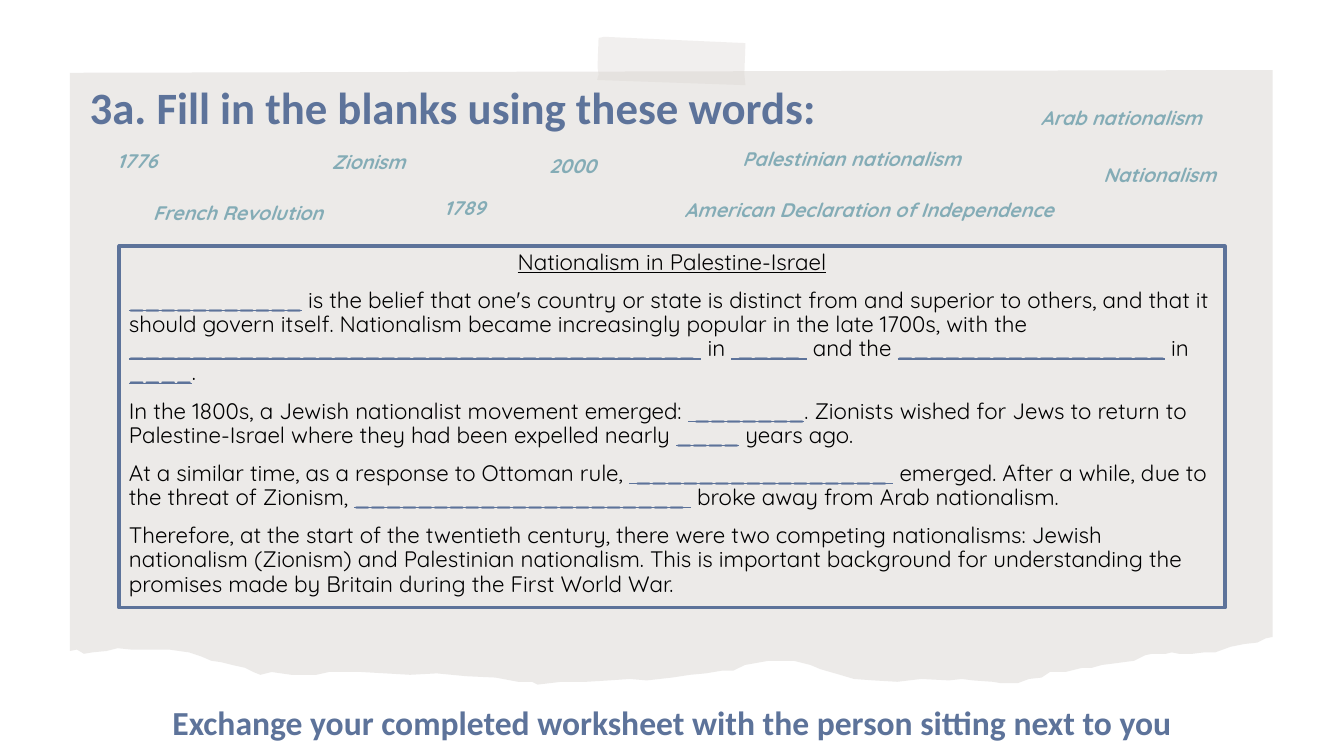
from lxml import etree
from pptx import Presentation
from pptx.dml import color
from pptx.enum import shapes, text
from pptx.oxml import ns
from pptx.util import Pt

BLUE, TEAL, BLACK = "5D739A", "84ACB6", "000000"


def paint(fill, hex_color, opacity=100):
    """Give a fill a solid colour, with opacity in percent."""
    fill.solid()
    fill.fore_color.rgb = color.RGBColor.from_string(hex_color)
    if opacity < 100:
        solid = fill._xPr.find(ns.qn("a:solidFill"))
        etree.SubElement(solid[0], ns.qn("a:alpha"), val=str(opacity * 1000))


def write(paragraph, content, hex_color, **font_values):
    """Add a run with the given font values to a paragraph."""
    paragraph.line_spacing = 0.9
    run = paragraph.add_run()
    run.text = content
    paint(run.font.fill, hex_color)
    for name, value in font_values.items():
        setattr(run.font, name, value)


presentation = Presentation()
presentation.slide_width, presentation.slide_height = Pt(960), Pt(540)
slide = presentation.slides.add_slide(presentation.slide_layouts[6])

# Torn sheet and sticky tape: outline points, colour, opacity, rotation
sheet_outline = [
    (909.4, 50.4), (909.4, 455), (904, 455.8), (898.5, 459.4), (889, 460),
    (879, 462.2), (868.3, 465.8), (859.7, 465.8), (851.8, 467.3), (842.4, 466.6),
    (836.6, 465.8), (833, 467.3), (823, 467.3), (818, 468), (810, 471.6),
    (795, 474.5), (787, 475.2), (780.5, 476.6), (772.6, 477.4), (761, 479.5),
    (755.3, 479.5), (750, 480.2), (743.8, 483.8), (735, 485.3), (727, 488.2),
    (715, 488.2), (709, 486.7), (695, 486), (687, 484.6), (677.5, 486),
    (658, 484.6), (641, 486.7), (624, 486), (610, 485.3), (600.5, 481.7),
    (593, 479.5), (586, 478), (579, 475.2), (566.6, 471.6), (558, 472.3),
    (549.4, 472.3), (532, 475.2), (524, 478.8), (516, 478.8), (504, 481),
    (493, 482.4), (480, 483.8), (462, 486), (450, 484.6), (435, 486),
    (419, 486.7), (401, 487.4), (384, 488.9), (380, 487.4), (370, 486.7),
    (353.5, 483.8), (333.4, 483), (312.5, 481), (293, 481.7), (258, 479.5),
    (234.7, 479.5), (226, 481.7), (208, 481.7), (194.4, 480.2), (186, 481.7),
    (181.4, 480.2), (175, 477.4), (165.6, 475.2), (158.4, 473), (151, 471.6),
    (144, 468.7), (135.4, 465.8), (128, 465), (121, 464.4), (111, 463.7),
    (103.7, 463.7), (94.3, 464.4), (84.2, 463), (76.3, 465), (65.5, 465.8),
    (59.8, 466.6), (54.7, 464.4), (50.4, 465), (50.4, 51.8),
]
tape_outline = [
    (427.2, 29), (430.6, 27.6), (531.7, 29.2), (532.5, 33.5), (532.2, 50.8),
    (532.7, 59.4), (427.4, 59.4), (427.8, 55), (426.9, 50), (427, 40),
]
for outline, fill_color, opacity, rotation in [
    (sheet_outline, "82766A", 15, 0),
    (tape_outline, "D9D4D0", 35, 2),
]:
    builder = slide.shapes.build_freeform(*outline[0], scale=Pt(1))
    builder.add_line_segments(outline[1:], close=True)
    shape = builder.convert_to_shape()
    shape.shadow.inherit = False
    shape.line.fill.background()
    shape.rotation = rotation
    paint(shape.fill, fill_color, opacity)

# Title and closing instruction
for content, box, size, alignment in [
    ("3a. Fill in the blanks using these words:", (57, 54, 687, 49), 32, text.PP_ALIGN.LEFT),
    ("Exchange your completed worksheet with the person sitting next to you",
     (0, 493, 960, 49), 24, text.PP_ALIGN.CENTER),
]:
    frame = slide.shapes.add_textbox(*map(Pt, box)).text_frame
    frame.word_wrap = True
    frame.vertical_anchor = text.MSO_ANCHOR.MIDDLE
    frame.paragraphs[0].alignment = alignment
    write(frame.paragraphs[0], content, BLUE, name="Calibri", size=Pt(size), bold=True)

# Worksheet: every second part between bars is a blank to fill in
worksheet = [
    "|___________| is the belief that one's country or state is distinct from and superior "
    "to others, and that it should govern itself. Nationalism became increasingly popular "
    "in the late 1700s, with the | ____________________________________ | in | ____ | and "
    "the |_________________| in |____|.",
    "In the 1800s, a Jewish nationalist movement emerged: | _______|. Zionists wished for "
    "Jews to return to Palestine-Israel where they had been expelled nearly |____| years ago.",
    "At a similar time, as a response to Ottoman rule, | ________________ | emerged. After "
    "a while, due to the threat of Zionism, |_____________________ | broke away from Arab "
    "nationalism.",
    "Therefore, at the start of the twentieth century, there were two competing "
    "nationalisms: Jewish nationalism (Zionism) and Palestinian nationalism. This is "
    "important background for understanding the promises made by Britain during the First "
    "World War.",
]
panel = slide.shapes.add_shape(
    shapes.MSO_SHAPE.RECTANGLE, Pt(85), Pt(175.7), Pt(790), Pt(258.5))
panel.shadow.inherit = False
panel.fill.background()
paint(panel.line.fill, BLUE)
panel.line.width = Pt(2.25)
frame = panel.text_frame
frame.word_wrap = True
frame.vertical_anchor = text.MSO_ANCHOR.TOP
body_font = {"name": "Quicksand", "size": Pt(16)}
heading = frame.paragraphs[0]
heading.alignment = text.PP_ALIGN.CENTER
write(heading, "Nationalism in Palestine-Israel", BLACK, underline=True, **body_font)
for passage in worksheet:
    paragraph = frame.add_paragraph()
    paragraph.alignment = text.PP_ALIGN.LEFT
    paragraph.space_before = Pt(10)
    for index, part in enumerate(passage.split("|")):
        blank = index % 2 == 1
        if part:
            write(paragraph, part, BLUE if blank else BLACK,
                  bold=blank, underline=blank, **body_font)

# Word bank: word, left, top, width
for word, left, top, width in [
    ("Nationalism", 757.4, 114.5, 142),
    ("American Declaration of Independence", 435, 139.7, 372),
    ("1776", 60, 105, 76),
    ("1789", 293.8, 138.2, 76),
    ("French Revolution", 57, 141.8, 226),
    ("Zionism", 208.8, 105.8, 109),
    ("2000", 371, 108, 76),
    ("Palestinian nationalism", 476.6, 103, 263.5),
    ("Arab nationalism", 711.4, 74.2, 179),
]:
    frame = slide.shapes.add_textbox(Pt(left), Pt(top), Pt(width), Pt(36)).text_frame
    frame.word_wrap = True
    frame.paragraphs[0].alignment = text.PP_ALIGN.CENTER
    write(frame.paragraphs[0], word, TEAL,
          name="Quicksand", size=Pt(14), bold=True, italic=True)

presentation.save("out.pptx")
